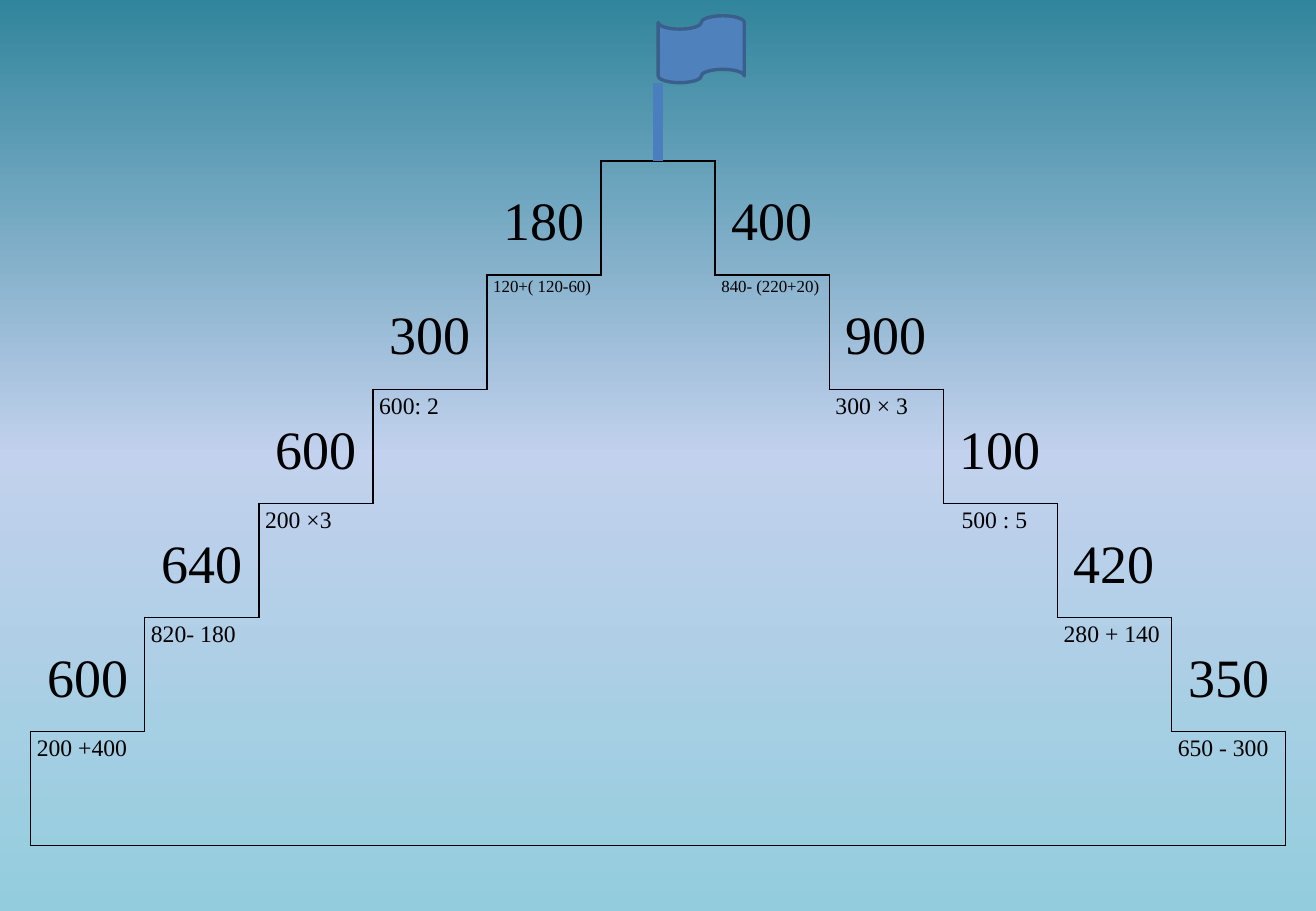
from copy import deepcopy
from dataclasses import dataclass

from lxml import etree
from pptx import Presentation
from pptx import util as u
from pptx.dml.color import RGBColor
from pptx.enum import shapes, text
from pptx.oxml.ns import qn


@dataclass(frozen=True)
class Theme:
    font: str = "Times New Roman"
    ink: str = "000000"
    sky: tuple = ("31859C", "C2D1ED", "93CDDD")
    flag: str = "4F81BD"
    flag_edge: str = "3A5F8C"
    pole: str = "4B7EBC"
    answer_pt: int = 32
    task_pt: int = 14
    small_pt: int = 10


# Answer and task for each step, from the top down
LEFT = [("180", "120+( 120-60)"), ("300", "600: 2"), ("600", "200 ×3"),
        ("640", "820- 180"), ("600", "200 +400")]
RIGHT = [("400", "840- (220+20)"), ("900", "300 × 3"), ("100", "500 : 5"),
         ("420", "280 + 140"), ("350", "650 - 300")]
ROWS, COLS, PEAK = 6, 11, 5


def in_stairs(row, col):
    return row < ROWS and abs(col - PEAK) <= min(row, PEAK)


class Deck:
    def __init__(self, theme):
        self.theme = theme
        self.prs = Presentation()
        self.prs.slide_width, self.prs.slide_height = u.Cm(27.51), u.Cm(19.05)
        self.s = self.prs.slides.add_slide(self.prs.slide_layouts[6])

    def background(self):
        fill = self.s.background.fill
        fill.gradient()
        fill.gradient_angle = 270
        stops = self.s.element.find(".//" + qn("a:gsLst"))
        stops.insert(1, deepcopy(stops[0]))
        for i, (stop, color) in enumerate(zip(fill.gradient_stops, self.theme.sky)):
            stop.color.rgb = RGBColor.from_string(color)
            stop.position = i / 2

    def grid(self, left, top, width, rows, cols):
        side = round(u.Cm(width) / cols)
        frame = self.s.shapes.add_table(rows, cols, u.Cm(left), u.Cm(top),
                                        side * cols, side * rows)
        table = frame.table
        table.first_row = table.horz_banding = False
        for band in table.rows:
            band.height = side
        for band in table.columns:
            band.width = side
        return table

    def borders(self, cell, drawn):
        tc_pr = cell._tc.get_or_add_tcPr()
        for edge in "LRTB":
            ln = etree.SubElement(tc_pr, qn(f"a:ln{edge}"), w=str(u.Pt(1)))
            if edge in drawn:
                fill = etree.SubElement(ln, qn("a:solidFill"))
                etree.SubElement(fill, qn("a:srgbClr"), val=self.theme.ink)
            else:
                etree.SubElement(ln, qn("a:noFill"))
        cell.fill.background()

    def label(self, cell, words, size, centred=False, left=0.13):
        cell.margin_left, cell.margin_right = u.Cm(left), u.Cm(0.13)
        cell.margin_top = cell.margin_bottom = 0
        cell.text = words
        p = cell.text_frame.paragraphs[0]
        p.line_spacing = 1.15
        p.font.name, p.font.size = self.theme.font, u.Pt(size)
        p.font.color.rgb = RGBColor.from_string(self.theme.ink)
        if centred:
            p.alignment = text.PP_ALIGN.CENTER
            cell.vertical_anchor = text.MSO_ANCHOR.MIDDLE

    def shape(self, kind, left, top, width, height, fill, edge, weight):
        sp = self.s.shapes.add_shape(kind, *map(u.Cm, (left, top, width, height)))
        sp.shadow.inherit = False
        sp.fill.solid()
        sp.fill.fore_color.rgb = RGBColor.from_string(fill)
        sp.line.color.rgb = RGBColor.from_string(edge)
        sp.line.width = u.Pt(weight)

    def line(self, x1, y1, x2, y2, color, weight):
        cx = self.s.shapes.add_connector(shapes.MSO_CONNECTOR.STRAIGHT,
                                         *map(u.Cm, (x1, y1, x2, y2)))
        cx.line.color.rgb = RGBColor.from_string(color)
        cx.line.width = u.Pt(weight)
        etree.SubElement(cx._element.spPr, qn("a:effectLst"))


def main():
    theme = Theme()
    deck = Deck(theme)
    deck.background()

    # Staircase: a border wherever the inside meets the outside
    table = deck.grid(0.64, 3.37, 26.24, ROWS, COLS)
    for row in range(ROWS):
        for col in range(COLS):
            around = {"L": (row, col - 1), "R": (row, col + 1),
                      "T": (row - 1, col), "B": (row + 1, col)}
            drawn = [edge for edge, near in around.items()
                     if in_stairs(row, col) != in_stairs(*near)]
            deck.borders(table.cell(row, col), drawn)

    # Answers stand on the steps, tasks are set below them
    for side, steps in ((-1, LEFT), (1, RIGHT)):
        for i, (answer, task) in enumerate(steps):
            col = PEAK + side * (i + 1)
            deck.label(table.cell(i, col), answer, theme.answer_pt, centred=True)
            deck.label(table.cell(i + 1, col), task,
                       theme.task_pt if i else theme.small_pt,
                       left=0.38 if task == "500 : 5" else 0.13)

    # Flag on the summit
    deck.shape(shapes.MSO_SHAPE.FLOWCHART_PUNCHED_TAPE, 13.76, 0.33, 1.8, 1.4,
               theme.flag, theme.flag_edge, 2)
    deck.line(13.76, 1.73, 13.76, 3.37, theme.pole, 6)

    deck.prs.save("out.pptx")


if __name__ == "__main__":
    main()
